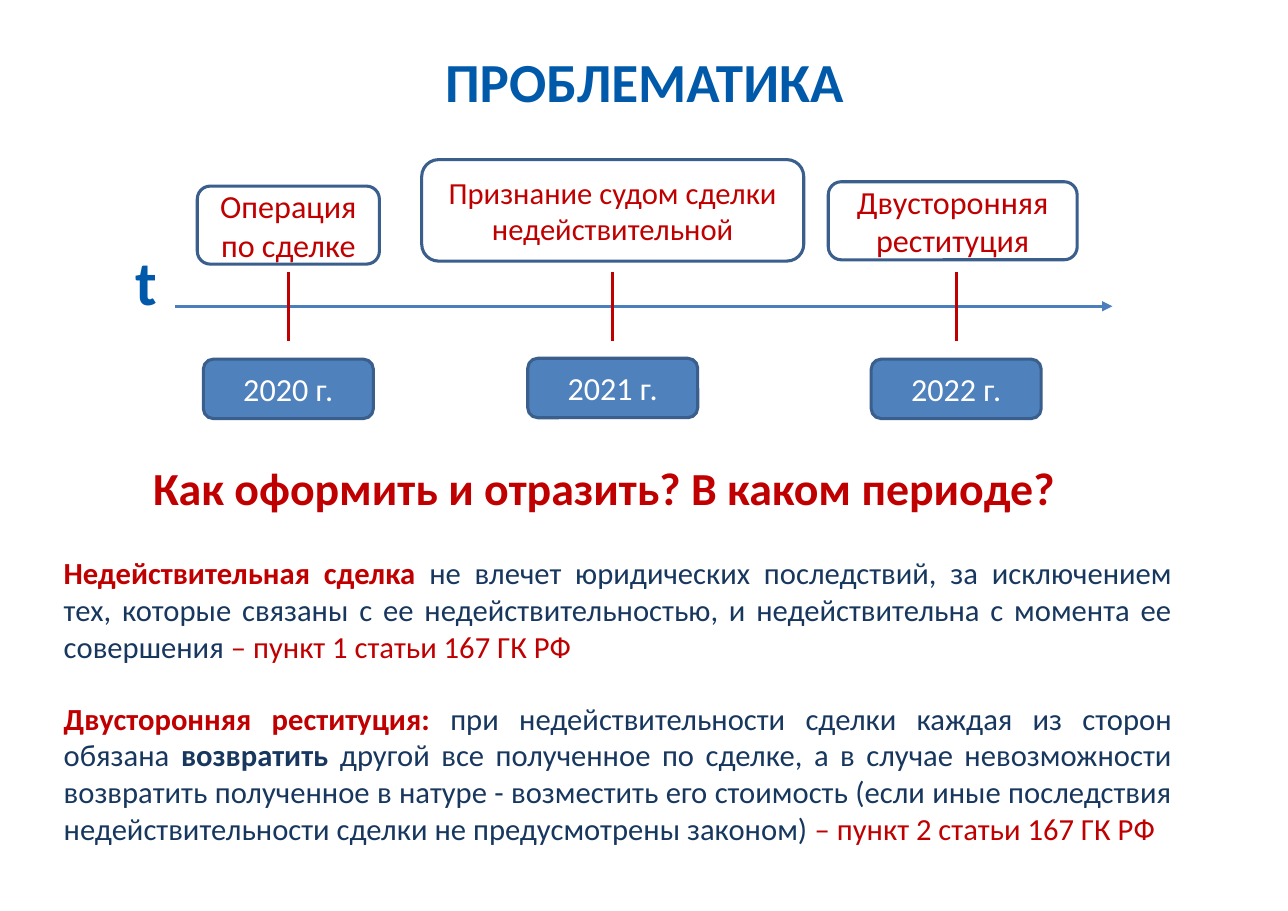
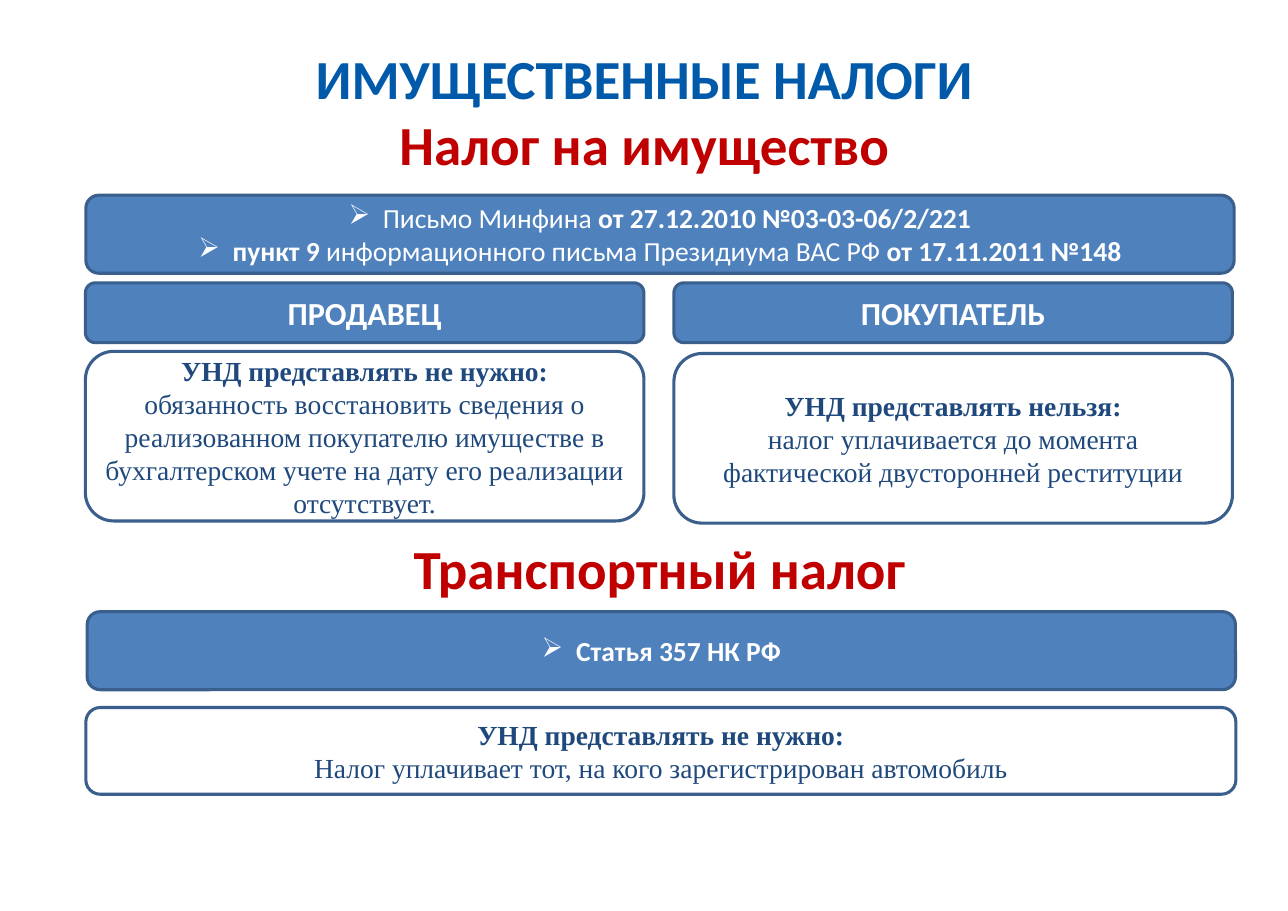
from lxml.etree import SubElement
from pptx import Presentation
from pptx.dml.color import RGBColor
from pptx.enum.shapes import MSO_CONNECTOR, MSO_SHAPE
from pptx.enum.text import MSO_ANCHOR, MSO_AUTO_SIZE, PP_ALIGN
from pptx.oxml import parse_xml
from pptx.oxml.ns import nsdecls, qn
from pptx.util import Cm, Pt

BLUE = RGBColor(0x00, 0x5A, 0xA9)
RED = RGBColor(0xC0, 0x00, 0x00)
NAVY = RGBColor(0x17, 0x37, 0x5E)
INDIGO = RGBColor(0x1F, 0x49, 0x7D)
FILL = RGBColor(0x4F, 0x81, 0xBD)
BORDER = RGBColor(0x3A, 0x5F, 0x8C)
AXIS = RGBColor(0x4B, 0x7E, 0xBC)
WHITE = RGBColor(0xFF, 0xFF, 0xFF)

SANS = "Calibri"
SERIF = "Times New Roman"
HEADING_SIZE = (24.38, 3.56)
HEADING_LEFT = 2.67
TICK_TOP, TICK_BOTTOM = 6.27, 7.87
AXIS_Y = 7.06
COLUMN_WIDTH = 12.88
COLUMN_LEFTS = (1.97, 15.54)
BAND = (26.48, 1.8)
SHADOW = (
    f'<a:effectLst {nsdecls("a")}><a:outerShdw blurRad="38100" dist="38100" dir="2700000" algn="tl">'
    '<a:srgbClr val="000000"><a:alpha val="43000"/></a:srgbClr></a:outerShdw></a:effectLst>'
)


def add_bullet(paragraph):
    """Give a paragraph an arrowhead bullet with a hanging indent."""
    properties = paragraph._p.get_or_add_pPr()
    properties.set("marL", str(Cm(0.79)))
    properties.set("indent", str(-Cm(0.79)))
    SubElement(properties, qn("a:buChar")).set("char", "➢")


def write(frame, paragraphs, size, color, font=SANS, align=PP_ALIGN.CENTER, bullets=False, shadow=False):
    """Fill a frame with paragraphs, each a list of (text, bold[, color]) runs."""
    frame.word_wrap = True
    for index, pieces in enumerate(paragraphs):
        paragraph = frame.add_paragraph() if index else frame.paragraphs[0]
        paragraph.alignment = align
        if bullets:
            add_bullet(paragraph)
        for text, bold, *own_color in pieces:
            run = paragraph.add_run()
            run.text = text
            run.font.size = Pt(size)
            run.font.bold = bold
            run.font.name = font
            run.font.color.rgb = own_color[0] if own_color else color
            if shadow:
                run._r.rPr.find(qn("a:solidFill")).addnext(parse_xml(SHADOW))


def set_middle(frame):
    """Apply the insets and anchor shared by headings and labels."""
    frame.auto_size = MSO_AUTO_SIZE.NONE
    frame.vertical_anchor = MSO_ANCHOR.MIDDLE
    frame.margin_left = frame.margin_right = Cm(0.28)
    frame.margin_top = frame.margin_bottom = Cm(0.15)


def add_titled_slide(deck, title_text, top):
    """Add a title-only slide with the shared title style."""
    slide = deck.slides.add_slide(deck.slide_layouts[5])
    title = slide.shapes.title
    title.left, title.top = Cm(HEADING_LEFT), Cm(top)
    title.width, title.height = (Cm(side) for side in HEADING_SIZE)
    set_middle(title.text_frame)
    write(title.text_frame, [[(title_text, True)]], 36, BLUE, shadow=True)
    return slide


def add_label(slide, left, top, width, height, text, size, color, spacing=None, **style):
    """Add a bold, vertically centred line of text."""
    label = slide.shapes.add_textbox(Cm(left), Cm(top), Cm(width), Cm(height))
    set_middle(label.text_frame)
    write(label.text_frame, [[(text, True)]], size, color, **style)
    if spacing:
        label.text_frame.paragraphs[0].line_spacing = spacing


def add_section_heading(slide, left, top, text):
    """Add a red heading in the title's style."""
    add_label(slide, left, top, *HEADING_SIZE, text, 36, RED, shadow=True)


def add_card(slide, left, top, width, height, paragraphs, size, color, fill=None, **style):
    """Add a rounded, outlined card with centred text."""
    card = slide.shapes.add_shape(MSO_SHAPE.ROUNDED_RECTANGLE, Cm(left), Cm(top), Cm(width), Cm(height))
    card.shadow.inherit = False
    if fill is None:
        card.fill.background()
    else:
        card.fill.solid()
        card.fill.fore_color.rgb = fill
    card.line.color.rgb = BORDER
    card.line.width = Pt(2)
    card.text_frame.vertical_anchor = MSO_ANCHOR.MIDDLE
    write(card.text_frame, paragraphs, size, color, **style)


def add_conclusion(slide, left, top, width, height, verdict, reason):
    """Add a white card with a bold verdict above its reason."""
    add_card(slide, left, top, width, height, [[(verdict, True)], [(reason, False)]],
             18, INDIGO, WHITE, font=SERIF)


def add_line(slide, x1, y1, x2, y2, color, arrow=False):
    """Add a straight line, optionally ending in an arrowhead."""
    line = slide.shapes.add_connector(MSO_CONNECTOR.STRAIGHT, Cm(x1), Cm(y1), Cm(x2), Cm(y2))
    line.line.color.rgb = color
    line.line.width = Pt(2.25)
    if arrow:
        SubElement(line.line._get_or_add_ln(), qn("a:tailEnd")).set("type", "triangle")
    SubElement(line._element.spPr, qn("a:effectLst"))


def add_milestone(slide, center, year, year_top, event, event_center, event_box, size):
    """Add a tick on the time axis with its event above and year below."""
    top, width, height = event_box
    add_line(slide, center, TICK_TOP, center, TICK_BOTTOM, RED)
    add_card(slide, event_center - width / 2, top, width, height, [[(event, False)]], size, RED)
    add_card(slide, center - 1.96, year_top, 3.92, 1.37, [[(year, False)]], 21, WHITE, FILL)


def add_legal_basis(slide):
    """Add the justified paragraphs quoting the Civil Code."""
    basis = slide.shapes.add_textbox(Cm(1.22), Cm(12.65), Cm(26.06), Cm(7.06))
    write(basis.text_frame, [
        [("Недействительная сделка ", True, RED),
         ("не влечет юридических последствий, за исключением тех, которые связаны с ее "
          "недействительностью, и недействительна с момента ее совершения ", False),
         ("– пункт 1 статьи 167 ГК РФ", False, RED)],
        [("Двусторонняя реституция: ", True, RED),
         ("при недействительности сделки каждая из сторон обязана ", False),
         ("возвратить", True),
         (" другой все полученное по сделке, а в случае невозможности возвратить полученное "
          "в натуре - возместить его стоимость (если иные последствия недействительности "
          "сделки не предусмотрены законом) ", False),
         ("– пункт 2 статьи 167 ГК РФ", False, RED)],
    ], 20, NAVY, align=PP_ALIGN.JUSTIFY)
    basis.text_frame.paragraphs[1].space_before = Pt(23)


def build_problem_slide(deck):
    """Build the timeline slide."""
    slide = add_titled_slide(deck, "ПРОБЛЕМАТИКА", 0.08)
    add_line(slide, 4.04, AXIS_Y, 25.65, AXIS_Y, AXIS, arrow=True)
    add_label(slide, 2.84, 5.74, 0.79, 1.8, "t", 40.8, BLUE, 0.8, align=PP_ALIGN.LEFT)
    milestones = (
        (6.65, "2020 г.", 8.28, "Операция по сделке", 6.65, (4.29, 4.2, 1.8), 21),
        (14.13, "2021 г.", 8.26, "Признание судом сделки недействительной", 14.13, (3.68, 8.81, 2.34), 20),
        (22.05, "2022 г.", 8.28, "Двусторонняя реституция", 21.97, (4.19, 5.74, 1.8), 21),
    )
    for milestone in milestones:
        add_milestone(slide, *milestone)
    add_label(slide, 3.25, 10.08, 24.05, 2.54, "Как оформить и отразить? В каком периоде?",
              30, RED, 0.8, align=PP_ALIGN.LEFT)
    add_legal_basis(slide)


def build_taxes_slide(deck):
    """Build the slide on property and transport taxes."""
    slide = add_titled_slide(deck, "ИМУЩЕСТВЕННЫЕ НАЛОГИ", 0)
    add_section_heading(slide, HEADING_LEFT, 1.52, "Налог на имущество")
    add_card(slide, 1.98, 4.5, *BAND, [
        [("Письмо Минфина ", False), ("от 27.12.2010 №03-03-06/2/221", True)],
        [("пункт 9 ", True), ("информационного письма Президиума ВАС РФ ", False),
         ("от 17.11.2011 №148", True)],
    ], 18, WHITE, FILL, bullets=True)
    parties = (
        ("ПРОДАВЕЦ", 8.1, "УНД представлять не нужно:",
         "обязанность восстановить сведения о реализованном покупателю имуществе в "
         "бухгалтерском учете на дату его реализации отсутствует."),
        ("ПОКУПАТЕЛЬ", 8.15, "УНД представлять нельзя:",
         "налог уплачивается до момента фактической двусторонней реституции"),
    )
    for left, (party, top, verdict, reason) in zip(COLUMN_LEFTS, parties):
        add_card(slide, left, 6.52, COLUMN_WIDTH, 1.38, [[(party, True)]], 21, WHITE, FILL)
        add_conclusion(slide, left, top, COLUMN_WIDTH, 3.91, verdict, reason)
    add_section_heading(slide, 3.02, 11.3, "Транспортный налог")
    add_card(slide, 2.01, 14.1, *BAND, [[("Статья 357 НК РФ", True)]], 18, WHITE, FILL, bullets=True)
    add_conclusion(slide, 1.98, 16.31, 26.52, 2, "УНД представлять не нужно:",
                   "Налог уплачивает тот, на кого зарегистрирован автомобиль")


def main():
    """Build and save the presentation."""
    deck = Presentation()
    deck.slide_width, deck.slide_height = Cm(29.7), Cm(21)
    build_problem_slide(deck)
    build_taxes_slide(deck)
    deck.save("out.pptx")


if __name__ == "__main__":
    main()
